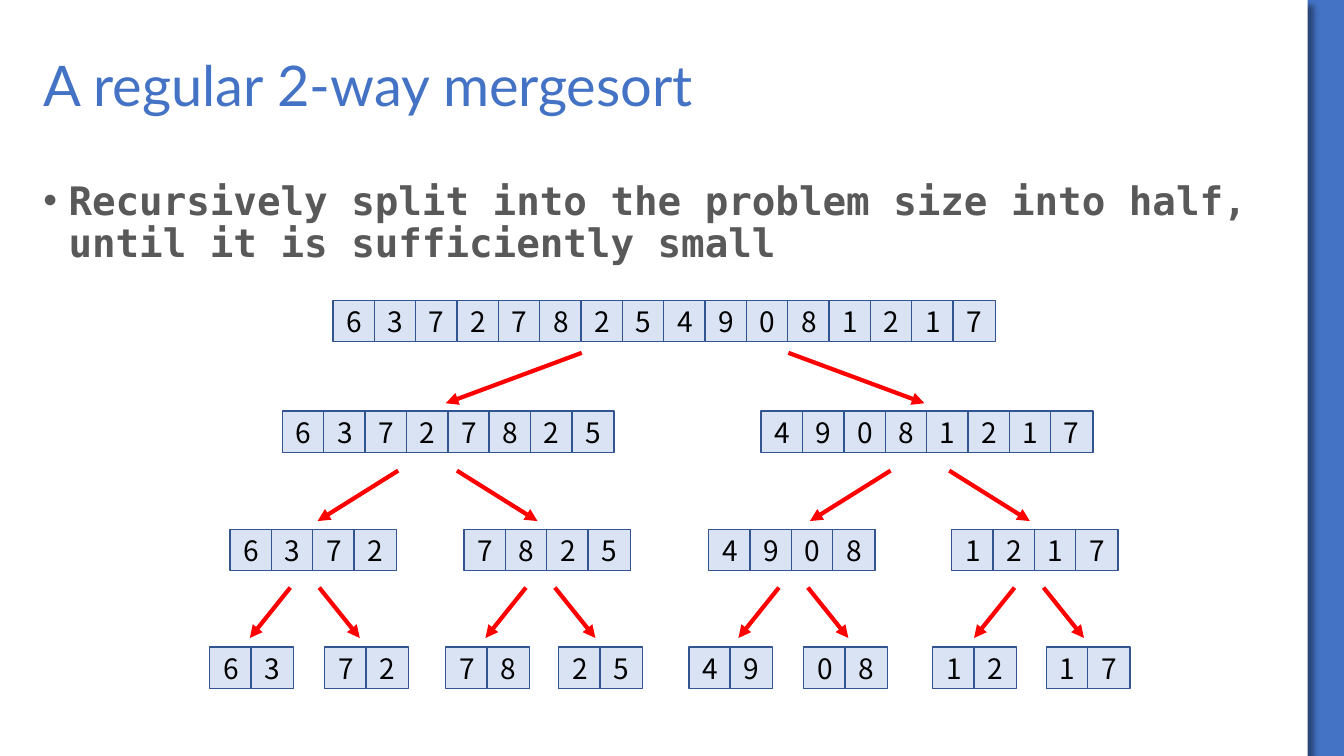
from lxml import etree
from pptx import Presentation, util as u
from pptx.dml.color import RGBColor
from pptx.enum import shapes, text
from pptx.oxml import ns, parse_xml

WIDTH, HEIGHT = 13.33, 7.5
CELL = 0.41
NUMBERS = "6372782549081217"
BLUE = "4472C4"

LEVELS = [
    (0, [2.98]),
    (2.68, [1.76, 13.34]),
    (5.54, [0.49, 6.15, 12.07, 17.95]),
    (8.39, [0, 2.78, 5.71, 8.44, 11.59, 14.37, 17.49, 20.24]),
]
FORKS = [
    (1.27, 2.5, 5.79, [11.5]),
    (4.12, 0.71, 2.66, [5.27, 17.18]),
    (6.95, 0.35, 1.33, [2.3, 8, 14.12, 19.82]),
]
FORK_DROP = 1.22


def color(code):
    return RGBColor.from_string(code)


def inches(*lengths):
    return [u.Inches(length) for length in lengths]


def add_effects(properties, content=""):
    properties.append(parse_xml(
        f'<a:effectLst {ns.nsdecls("a")}>{content}</a:effectLst>'))


def add_panel(slide, box):
    background = slide.background.fill
    background.solid()
    background.fore_color.rgb = color(BLUE)
    panel = slide.shapes.add_shape(shapes.MSO_SHAPE.RECTANGLE, *inches(*box))
    panel.fill.solid()
    panel.fill.fore_color.rgb = color("FFFFFF")
    panel.line.fill.background()
    add_effects(panel._element.spPr,
                f'<a:outerShdw blurRad="{u.Pt(4)}" dist="{u.Pt(6)}" '
                'dir="2700000" algn="tl" rotWithShape="0"><a:srgbClr val="000000">'
                '<a:alpha val="40000"/></a:srgbClr></a:outerShdw>')
    slide.shapes._spTree.insert(2, panel._element)


def fill_placeholder(holder, box, wording, anchor):
    holder.left, holder.top, holder.width, holder.height = inches(*box)
    frame = holder.text_frame
    frame.text = wording
    frame.word_wrap = True
    frame.auto_size = text.MSO_AUTO_SIZE.NONE
    frame.vertical_anchor = anchor
    paragraph = frame.paragraphs[0]
    paragraph.alignment = text.PP_ALIGN.LEFT
    paragraph.line_spacing = 0.9
    return paragraph


def set_font(paragraph, name, size, code, bold=False):
    font = paragraph.font
    font.name, font.size, font.bold = name, u.Pt(size), bold
    font.color.rgb = color(code)


def add_title(slide, box):
    title = fill_placeholder(slide.shapes.title, box, "A regular 2-way mergesort",
                             text.MSO_ANCHOR.MIDDLE)
    set_font(title, "Lato", 40, BLUE)


def add_summary(slide, box):
    summary = fill_placeholder(
        slide.placeholders[1], box,
        "Recursively split into the problem size into half, "
        "until it is sufficiently small", text.MSO_ANCHOR.TOP)
    summary.space_before = u.Pt(6)
    properties = summary._p.get_or_add_pPr()
    properties.set("marL", str(u.Inches(0.25)))
    properties.set("indent", str(-u.Inches(0.25)))
    etree.SubElement(properties, ns.qn("a:buFont"), typeface="Arial")
    etree.SubElement(properties, ns.qn("a:buChar"), char="•")
    set_font(summary, "DejaVu Sans Mono", 28, "595959", True)


def add_array(slide, left, top, digits):
    for column, digit in enumerate(digits):
        cell = slide.shapes.add_shape(
            shapes.MSO_SHAPE.RECTANGLE,
            *inches(left + column * CELL, top, CELL + 0.01, CELL))
        cell.shadow.inherit = False
        cell.fill.solid()
        cell.fill.fore_color.rgb = color("DAE3F3")
        cell.line.color.rgb = color("325491")
        cell.line.width = u.Pt(1)
        frame = cell.text_frame
        frame.text = digit
        frame.vertical_anchor = text.MSO_ANCHOR.MIDDLE
        number = frame.paragraphs[0]
        number.alignment = text.PP_ALIGN.CENTER
        set_font(number, "Noto Sans CJK SC", 20, "000000")


def add_arrow(slide, *ends):
    arrow = slide.shapes.add_connector(shapes.MSO_CONNECTOR.STRAIGHT, *inches(*ends))
    arrow.line.color.rgb = color("FF0000")
    arrow.line.width = u.Pt(3)
    etree.SubElement(arrow.line._get_or_add_ln(), ns.qn("a:tailEnd"), type="triangle")
    add_effects(arrow._element.spPr)


def add_split_tree(slide, left, top):
    for row, columns in LEVELS:
        size = len(NUMBERS) // len(columns)
        for part, column in enumerate(columns):
            add_array(slide, left + column * CELL, top + row * CELL,
                      NUMBERS[part * size:(part + 1) * size])
    for row, start, reach, centers in FORKS:
        for center in centers:
            for side in (-1, 1):
                add_arrow(slide,
                          left + (center + side * start) * CELL, top + row * CELL,
                          left + (center + side * reach) * CELL,
                          top + (row + FORK_DROP) * CELL)


def main():
    deck = Presentation()
    deck.slide_width, deck.slide_height = inches(WIDTH, HEIGHT)
    slide = deck.slides.add_slide(deck.slide_layouts[1])
    add_panel(slide, (0, 0, 12.97, HEIGHT))
    add_title(slide, (0.33, 0.5, 12.33, 0.75))
    add_summary(slide, (0.33, 1.75, 12.25, 1.17))
    add_split_tree(slide, 2.08, 2.98)
    deck.save("out.pptx")


if __name__ == "__main__":
    main()
